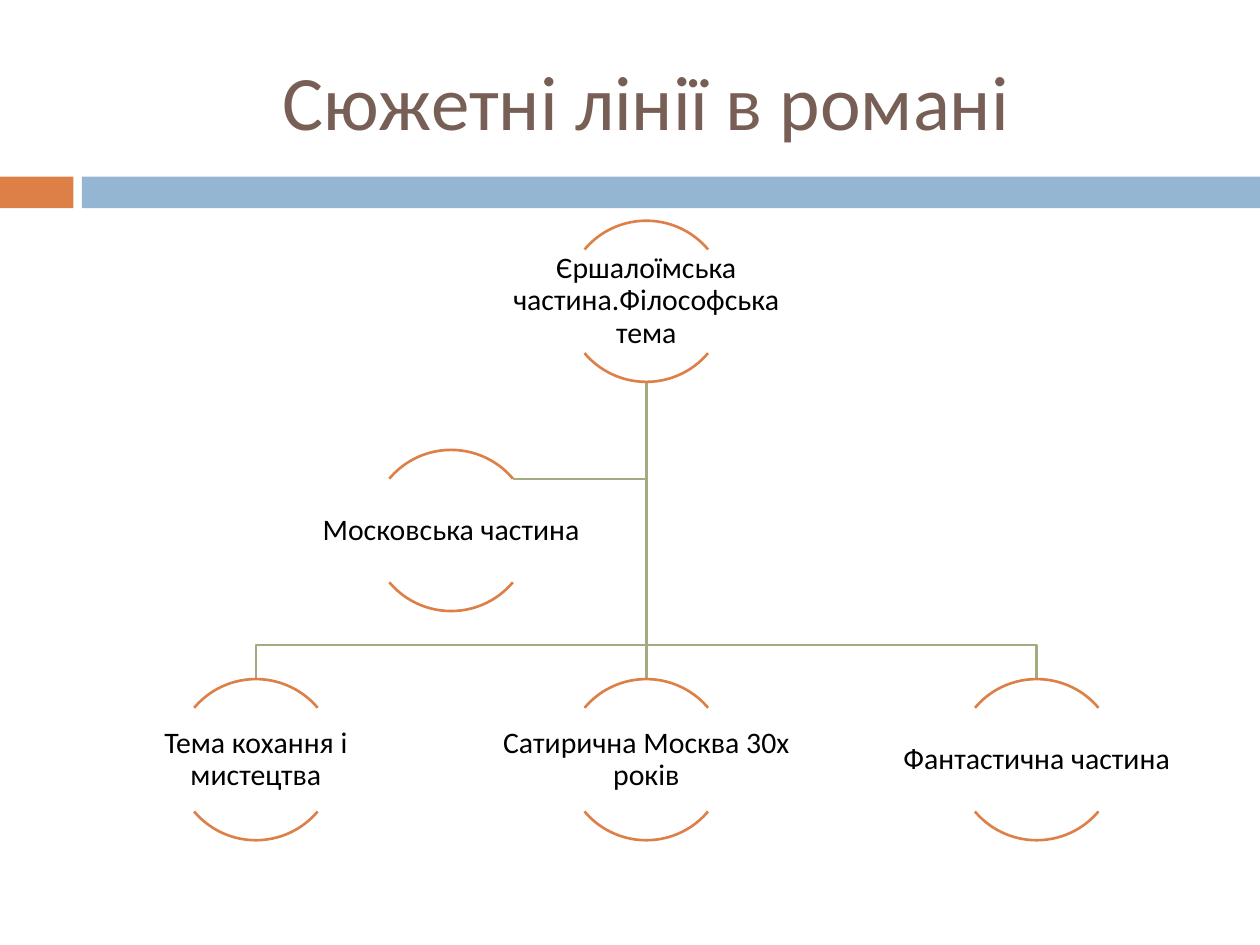
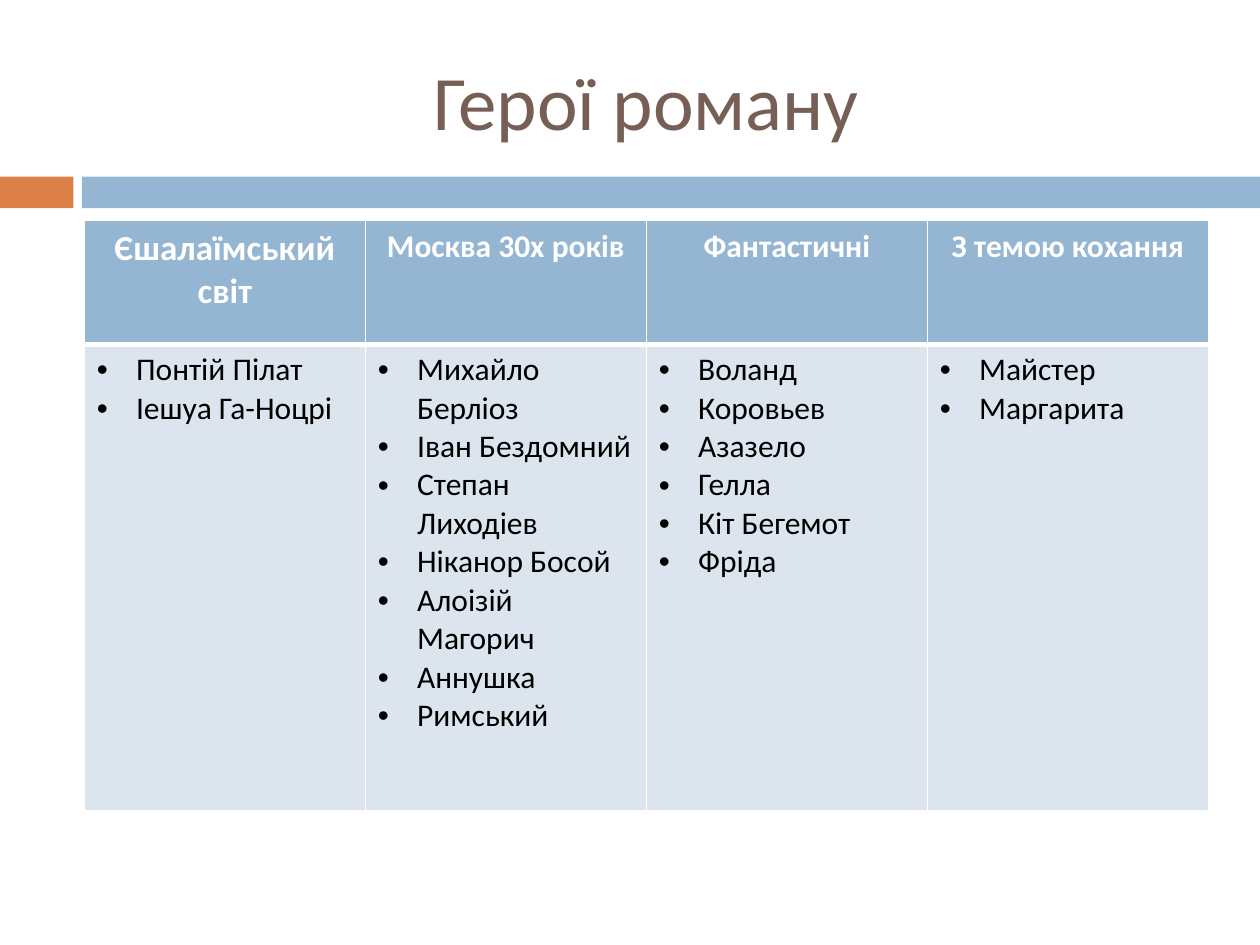
from lxml import etree
from pptx import Presentation
from pptx.dml.color import RGBColor
from pptx.enum.shapes import MSO_CONNECTOR, MSO_SHAPE
from pptx.enum.text import MSO_ANCHOR, PP_ALIGN
from pptx.oxml.ns import qn
from pptx.util import Cm, Pt

RECT, ARC = MSO_SHAPE.RECTANGLE, MSO_SHAPE.ARC
STRAIGHT = MSO_CONNECTOR.STRAIGHT
MIDDLE = MSO_ANCHOR.MIDDLE
CENTER, LEFT = PP_ALIGN.CENTER, PP_ALIGN.LEFT

FONT = "Calibri"
COLORS = {
    "title": "775F55",
    "accent": "DD8047",
    "band": "94B6D2",
    "branch": "A5AB81",
    "cell": "DCE5EE",
    "text": "000000",
    "white": "FFFFFF",
}

EDGE, WIDTH = 1.7, 22.66
TOP = 4.45
RING, LABEL, TALL = 3.25, 6.5, 2.08
INSET = (RING - TALL) / 2
MID, STEP, DROP = 13.03, 7.87, 4.62
INDENT = 0.79

HEADS = [
    ("Єшалаїмський світ", 20),
    ("Москва 30х років", 18),
    ("Фантастичні", 18),
    ("З темою кохання", 18),
]
HEROES = [
    ["Понтій Пілат", "Іешуа Га-Ноцрі"],
    ["Михайло Берліоз", "Іван Бездомний", "Степан Лиходіев", "Ніканор Босой",
     "Алоізій Магорич", "Аннушка", "Римський"],
    ["Воланд", "Коровьев", "Азазело", "Гелла", "Кіт Бегемот", "Фріда"],
    ["Майстер", "Маргарита"],
]


def tint(name):
    return RGBColor.from_string(COLORS[name])


def write(para, text, size, color, align=CENTER, bold=False):
    para.alignment = align
    run = para.add_run()
    run.text = text
    run.font.name = FONT
    run.font.size = Pt(size)
    run.font.bold = bold
    run.font.color.rgb = tint(color)


def stroke(line, color):
    line.color.rgb = tint(color)
    line.width = Pt(1.5)


def add_band(slide, left, width, color):
    band = slide.shapes.add_shape(RECT, Cm(left), Cm(3.56), Cm(width), Cm(0.64))
    band.shadow.inherit = False
    band.fill.solid()
    band.fill.fore_color.rgb = tint(color)
    band.line.fill.background()


def add_slide(deck, heading):
    slide = deck.slides.add_slide(deck.slide_layouts[5])
    add_band(slide, 0, 1.48, "accent")
    add_band(slide, 1.65, 23.75, "band")
    title = slide.shapes.title
    title.left, title.top = Cm(EDGE), Cm(0.64)
    title.width, title.height = Cm(WIDTH), Cm(2.74)
    title.text_frame.vertical_anchor = MIDDLE
    write(title.text_frame.paragraphs[0], heading, 44, "title")
    return slide


def add_arc(slide, mid, top, start, end):
    arc = slide.shapes.add_shape(ARC, Cm(mid - RING / 2), Cm(top), Cm(RING), Cm(RING))
    arc.shadow.inherit = False
    arc.adjustments[0] = start * 0.6
    arc.adjustments[1] = end * 0.6
    arc.fill.background()
    stroke(arc.line, "accent")


def add_node(slide, text, mid, top):
    add_arc(slide, mid, top, 220, 320)
    add_arc(slide, mid, top, 40, 140)
    box = slide.shapes.add_textbox(
        Cm(mid - LABEL / 2), Cm(top + INSET), Cm(LABEL), Cm(TALL))
    frame = box.text_frame
    frame.word_wrap = True
    frame.vertical_anchor = MIDDLE
    frame.margin_left = frame.margin_right = Cm(0.03)
    frame.margin_top = frame.margin_bottom = Cm(0.03)
    para = frame.paragraphs[0]
    para.line_spacing = 0.9
    write(para, text, 17, "text")


def add_branch(slide, points):
    start, *rest = [(Cm(x), Cm(y)) for x, y in points]
    pen = slide.shapes.build_freeform(*start)
    pen.add_line_segments(rest, close=False)
    branch = pen.convert_to_shape()
    branch.shadow.inherit = False
    branch.fill.background()
    stroke(branch.line, "branch")


def add_trunk(slide, top, end):
    trunk = slide.shapes.add_connector(STRAIGHT, Cm(MID), Cm(top), Cm(MID), Cm(end))
    stroke(trunk.line, "branch")
    etree.SubElement(trunk._element.spPr, qn("a:effectLst"))


def add_tree(slide):
    root = TOP + RING
    side, side_top = MID - STEP / 2, TOP + DROP
    base = TOP + 2 * DROP
    fork = base - 0.69
    joint = side_top + INSET
    add_branch(slide, [(MID, root), (MID, joint), (side + 1.25, joint)])
    for end in (MID + STEP, MID - STEP):
        add_branch(slide, [(MID, root), (MID, fork), (end, fork), (end, base)])
    add_trunk(slide, root, base)
    add_node(slide, "Єршалоїмська частина.Філософська тема", MID, TOP)
    add_node(slide, "Московська частина", side, side_top)
    themes = ["Тема кохання і мистецтва", "Сатирична Москва 30х років",
              "Фантастична частина"]
    for col, theme in enumerate(themes):
        add_node(slide, theme, MID + (col - 1) * STEP, base)


def paint(cell, color, top, bottom):
    cell.fill.solid()
    cell.fill.fore_color.rgb = tint(color)
    props = cell._tc.get_or_add_tcPr()
    sides = [("L", 1), ("R", 1), ("T", top), ("B", bottom)]
    for place, (side, width) in enumerate(sides):
        line = etree.Element(qn("a:ln" + side), w=str(Pt(width)))
        fill = etree.SubElement(line, qn("a:solidFill"))
        etree.SubElement(fill, qn("a:srgbClr"), val=COLORS["white"])
        props.insert(place, line)


def add_dot(para):
    props = para._p.get_or_add_pPr()
    props.set("marL", str(Cm(INDENT)))
    props.set("indent", str(-Cm(INDENT)))
    etree.SubElement(props, qn("a:buFont"), typeface="Arial")
    etree.SubElement(props, qn("a:buChar"), char="•")


def fill_list(frame, names):
    for row, name in enumerate(names):
        para = frame.add_paragraph() if row else frame.paragraphs[0]
        write(para, name, 18, "text", LEFT)
        add_dot(para)


def add_grid(slide):
    grid = slide.shapes.add_table(
        2, len(HEADS), Cm(EDGE), Cm(TOP), Cm(WIDTH), Cm(11.89)).table
    grid.rows[0].height = Cm(2.49)
    grid.rows[1].height = Cm(9.4)
    for col, ((head, size), names) in enumerate(zip(HEADS, HEROES)):
        grid.columns[col].width = Cm(WIDTH / len(HEADS))
        cell = grid.cell(0, col)
        paint(cell, "band", 1, 3)
        write(cell.text_frame.paragraphs[0], head, size, "white", bold=True)
        cell = grid.cell(1, col)
        paint(cell, "cell", 3, 1)
        fill_list(cell.text_frame, names)


def main():
    deck = Presentation()
    deck.slide_width, deck.slide_height = Cm(25.4), Cm(19.05)
    add_tree(add_slide(deck, "Сюжетні лінії в романі"))
    add_grid(add_slide(deck, "Герої роману"))
    deck.save("out.pptx")


if __name__ == "__main__":
    main()
